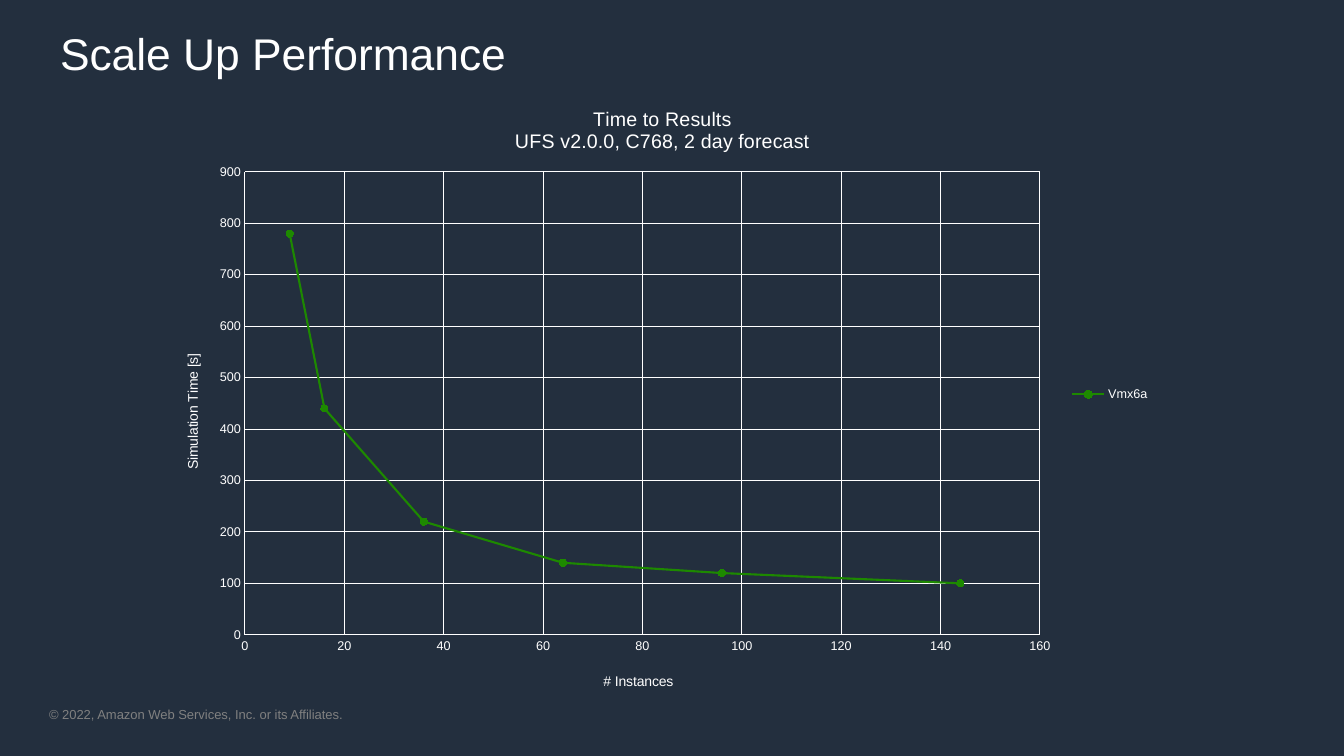
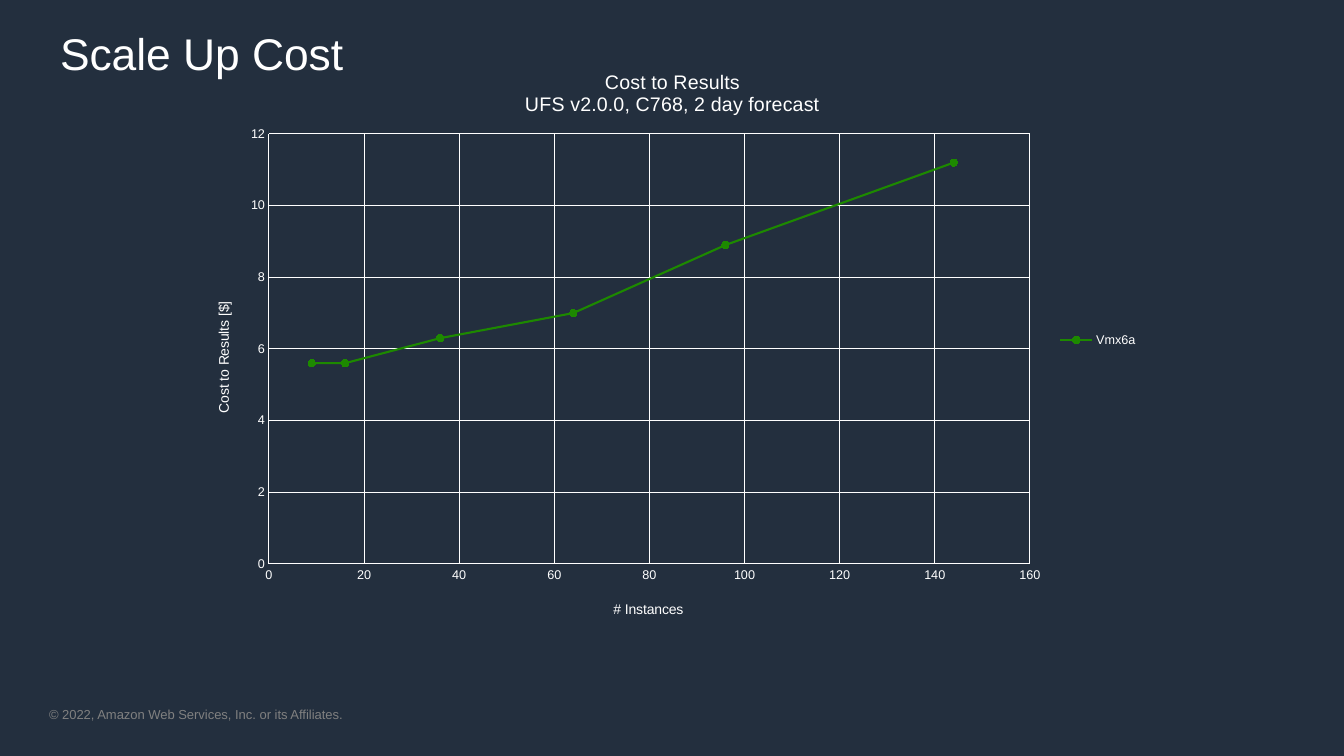
import pptx
import pptx.chart.data
import pptx.dml.color
import pptx.enum.chart
import pptx.oxml
import pptx.oxml.ns
import pptx.util

SCALE = 914400 / 100.8
FONT = "Arial"
HUES = {"back": "232F3E", "text": "FFFFFF", "foot": "808080", "line": "1D8900"}
NODES = (9, 16, 36, 64, 96, 144)
SERIES = "Vmx6a"
RUNS = "UFS v2.0.0, C768, 2 day forecast"
SLIDES = (
    {
        "title": "Scale Up Performance",
        "head": "Time to Results",
        "unit": "Simulation Time [s]",
        "vals": (780, 440, 220, 140, 120, 100),
        "top": 900,
        "step": 100,
        "box": (158, 81, 1002, 627),
        "plot": (87, 91, 795, 463),
        "spots": ((354, 23), (443, 589), (23, 270)),
    },
    {
        "title": "Scale Up Cost",
        "head": "Cost to Results",
        "unit": "Cost to Results [$]",
        "vals": (5.6, 5.6, 6.3, 7, 8.9, 11.2),
        "top": 12,
        "step": 2,
        "box": (189, 44, 959, 592),
        "plot": (80, 90, 761, 430),
        "spots": ((333, 23), (422, 554), (23, 255)),
    },
)


def px(num):
    """Turn pixels into EMU."""
    return pptx.util.Emu(round(num * SCALE))


def hue(name):
    """Look up a colour."""
    return pptx.dml.color.RGBColor.from_string(HUES[name])


def style(font, size, name="text"):
    """Set face, size and colour of a font."""
    font.name = FONT
    font.size = pptx.util.Pt(size)
    font.bold = False
    font.color.rgb = hue(name)


def stroke(line, name, width):
    """Set colour and width of a line."""
    line.color.rgb = hue(name)
    line.width = pptx.util.Pt(width)


def write(frame, lines, size, name="text"):
    """Write each line as a paragraph with one run."""
    for num, line in enumerate(lines):
        para = frame.add_paragraph() if num else frame.paragraphs[0]
        run = para.add_run()
        run.text = line
        style(run.font, size, name)


def label(slide, box, text, size, name="text", pad=(0, 0)):
    """Place a text box with the given left and top padding."""
    frame = slide.shapes.add_textbox(*map(px, box)).text_frame
    frame.word_wrap = True
    frame.margin_left = frame.margin_right = px(pad[0])
    frame.margin_top = frame.margin_bottom = px(pad[1])
    write(frame, [text], size, name)


def place(node, box, size):
    """Fix the place of a chart part, in pixels from the chart's corner."""
    tag = pptx.oxml.ns.qn
    old = node.find(tag("c:layout"))
    if old is not None:
        node.remove(old)
    parts = [("xMode", "edge"), ("yMode", "edge")]
    if len(box) == 4:
        parts.insert(0, ("layoutTarget", "inner"))
    for key, num, full in zip("xywh", box, size * 2):
        parts.append((key, round(num / full, 4)))
    body = "".join(f'<c:{key} val="{val}"/>' for key, val in parts)
    space = pptx.oxml.ns.nsdecls("c")
    xml = f"<c:layout {space}><c:manualLayout>{body}</c:manualLayout></c:layout>"
    node.insert(len(node.findall(tag("c:tx"))), pptx.oxml.parse_xml(xml))


def scale_axis(axis, text, top, step):
    """Set range, grid, labels and title of an axis."""
    axis.minimum_scale = 0
    axis.maximum_scale = top
    axis.major_unit = step
    axis.has_major_gridlines = True
    axis.major_tick_mark = pptx.enum.chart.XL_TICK_MARK.NONE
    axis.minor_tick_mark = pptx.enum.chart.XL_TICK_MARK.NONE
    stroke(axis.major_gridlines.format.line, "text", 0.75)
    stroke(axis.format.line, "text", 0.75)
    style(axis.tick_labels.font, 9)
    axis.tick_labels.number_format = "General"
    axis.tick_labels.number_format_is_linked = False
    write(axis.axis_title.text_frame, [text], 10)


def draw_line(line):
    """Style the curve and its markers."""
    line.smooth = True
    stroke(line.format.line, "line", 1.5)
    mark = line.marker
    mark.style = pptx.enum.chart.XL_MARKER_STYLE.CIRCLE
    mark.size = 5
    mark.format.fill.solid()
    mark.format.fill.fore_color.rgb = hue("line")
    stroke(mark.format.line, "line", 0.75)


def plot(slide, item):
    """Place the scatter chart in its box."""
    data = pptx.chart.data.XyChartData()
    points = data.add_series(SERIES)
    for pair in zip(NODES, item["vals"]):
        points.add_data_point(*pair)
    kind = pptx.enum.chart.XL_CHART_TYPE.XY_SCATTER_SMOOTH
    chart = slide.shapes.add_chart(kind, *map(px, item["box"]), data).chart
    style(chart.font, 10)
    chart.plots[0].vary_by_categories = False
    draw_line(chart.series[0])

    chart.has_title = True
    write(chart.chart_title.text_frame, [item["head"], RUNS], 14)
    across, upright = chart.category_axis, chart.value_axis
    scale_axis(across, "# Instances", 160, 20)
    scale_axis(upright, item["unit"], item["top"], item["step"])
    for body in upright.axis_title._element.iter(pptx.oxml.ns.qn("a:bodyPr")):
        body.set("rot", "-5400000")
        body.set("vert", "horz")

    chart.has_legend = True
    chart.legend.position = pptx.enum.chart.XL_LEGEND_POSITION.RIGHT
    chart.legend.include_in_layout = False
    style(chart.legend.font, 9)

    size = item["box"][2:]
    heads = (chart.chart_title, across.axis_title, upright.axis_title)
    for head, spot in zip(heads, item["spots"]):
        place(head._element, spot, size)
    area = chart._chartSpace.find(".//" + pptx.oxml.ns.qn("c:plotArea"))
    place(area, item["plot"], size)


def build(deck, item):
    """Add one chart slide with title and footer."""
    slide = deck.slides.add_slide(deck.slide_layouts[6])
    label(slide, (49, 706, 653, 16),
          "© 2022, Amazon Web Services, Inc. or its Affiliates.", 9.3, "foot")
    label(slide, (50, 17, 1241, 92), item["title"], 31.7, pad=(10, 9))
    plot(slide, item)


def main():
    """Build and save the deck."""
    deck = pptx.Presentation()
    deck.slide_width, deck.slide_height = px(1344), px(756)
    fill = deck.slide_master.background.fill
    fill.solid()
    fill.fore_color.rgb = hue("back")
    for item in SLIDES:
        build(deck, item)
    deck.save("out.pptx")


if __name__ == "__main__":
    main()
